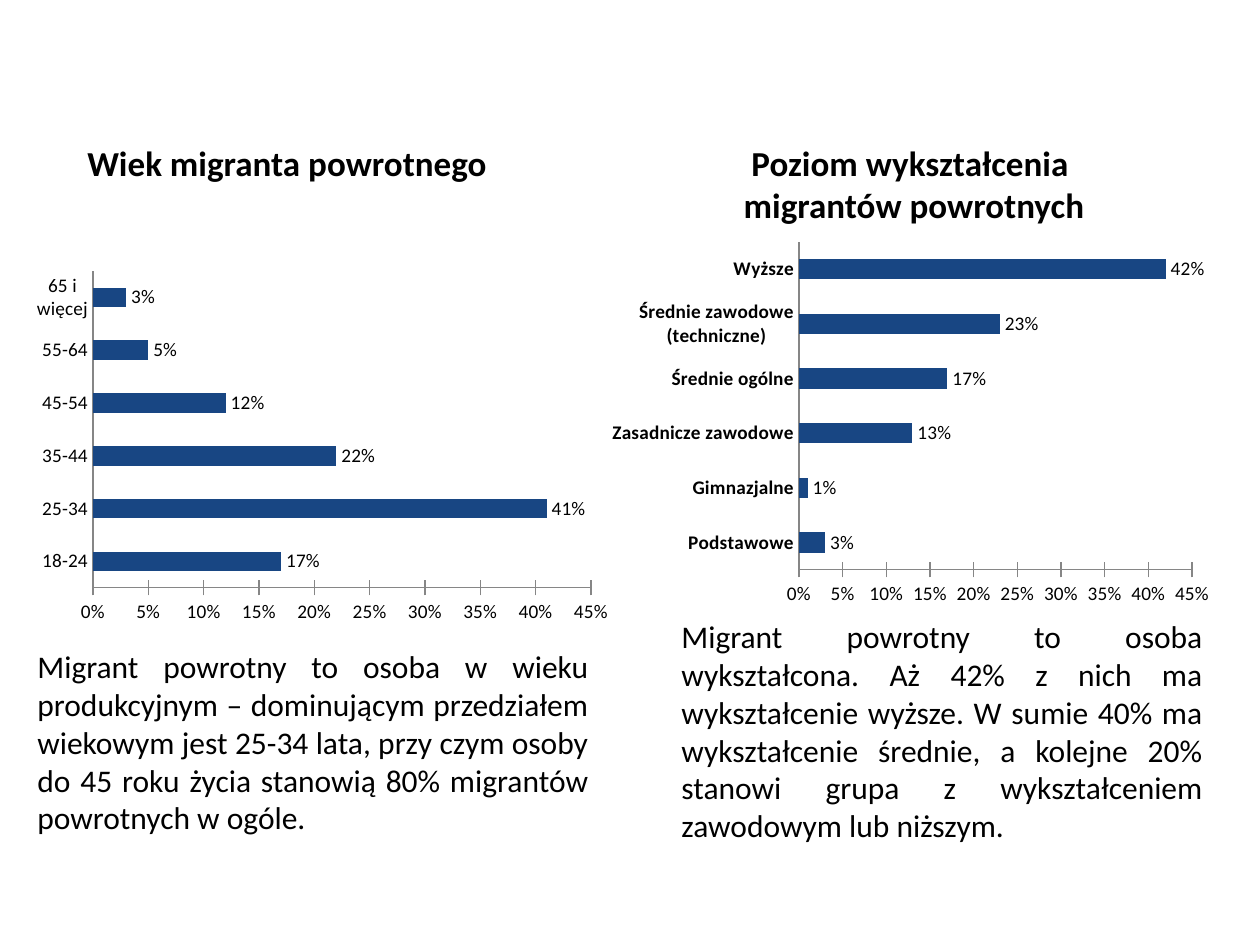
from dataclasses import dataclass

from pptx import Presentation, util as u
from pptx.chart.data import CategoryChartData
from pptx.dml.color import RGBColor
from pptx.enum import chart as ch, text
from pptx.oxml import parse_xml
from pptx.oxml.ns import nsdecls

SCALE = 914400 / 126


@dataclass(frozen=True)
class Theme:
    font: str = "Calibri"
    ink: str = "000000"
    bar: str = "184683"
    axis: str = "868686"
    head: int = 20
    body: int = 18
    label: int = 11


THEME = Theme()


def px(*sizes):
    return [u.Emu(round(size * SCALE)) for size in sizes]


def style(font, size, bold=False):
    font.name = THEME.font
    font.size = u.Pt(size)
    font.bold = bold
    font.color.rgb = RGBColor.from_string(THEME.ink)


def add_text(slide, box, lines, size, align, bold=False, wrap=True):
    frame = slide.shapes.add_textbox(*px(*box)).text_frame
    frame.word_wrap = wrap
    frame.auto_size = text.MSO_AUTO_SIZE.SHAPE_TO_FIT_TEXT
    para = frame.paragraphs[0]
    para.alignment = align
    for i, line in enumerate(lines):
        if i:
            para.add_line_break()
        run = para.add_run()
        run.text = line
        style(run.font, size, bold)


def add_head(slide, box, *lines, wrap=True):
    add_text(slide, box, lines, THEME.head, text.PP_ALIGN.CENTER, True, wrap)


def add_body(slide, box, words):
    add_text(slide, box, [words], THEME.body, text.PP_ALIGN.JUSTIFY)


def place_plot(chart, box, plot):
    """Fix the inner plot area, given in slide px like the chart box."""
    left, top, width, height = box
    parts = {"x": (plot[0] - left) / width, "y": (plot[1] - top) / height,
             "w": plot[2] / width, "h": plot[3] / height}
    modes = '<c:xMode val="edge"/><c:yMode val="edge"/>'
    sizes = "".join(f'<c:{key} val="{val:.4f}"/>' for key, val in parts.items())
    area = chart.element.xpath("c:chart/c:plotArea")[0]
    for old in area.xpath("c:layout"):
        area.remove(old)
    area.insert(0, parse_xml(
        f'<c:layout {nsdecls("c")}><c:manualLayout><c:layoutTarget val="inner"/>'
        f"{modes}{sizes}</c:manualLayout></c:layout>"))


def style_axis(axis, tick, bold=False):
    axis.has_major_gridlines = False
    axis.major_tick_mark = tick
    axis.minor_tick_mark = ch.XL_TICK_MARK.NONE
    axis.format.line.color.rgb = RGBColor.from_string(THEME.axis)
    axis.format.line.width = u.Pt(0.75)
    style(axis.tick_labels.font, THEME.label, bold)


def add_bars(slide, box, plot, shares, bold=False):
    data = CategoryChartData(number_format="0%")
    data.categories = list(shares)
    data.add_series("Series 1", list(shares.values()))
    chart = slide.shapes.add_chart(
        ch.XL_CHART_TYPE.BAR_CLUSTERED, *px(*box), data).chart
    chart.has_title = chart.has_legend = False
    style(chart.font, 10)
    style_axis(chart.category_axis, ch.XL_TICK_MARK.NONE, bold)
    scale = chart.value_axis
    style_axis(scale, ch.XL_TICK_MARK.CROSS)
    scale.minimum_scale, scale.maximum_scale, scale.major_unit = 0, 0.45, 0.05
    scale.tick_labels.number_format = "0%"
    scale.tick_labels.number_format_is_linked = False

    bars = chart.plots[0]
    bars.vary_by_categories = False
    bars.gap_width, bars.overlap = 170, -25
    fill = bars.series[0].format.fill
    fill.solid()
    fill.fore_color.rgb = RGBColor.from_string(THEME.bar)
    bars.has_data_labels = True
    labels = bars.data_labels
    labels.show_value = True
    labels.number_format = "0%"
    labels.number_format_is_linked = False
    labels.position = ch.XL_LABEL_POSITION.OUTSIDE_END
    style(labels.font, THEME.label)
    place_plot(chart, box, plot)


def main():
    deck = Presentation()
    deck.slide_width, deck.slide_height = px(1260, 945)
    slide = deck.slides.add_slide(deck.slide_layouts[6])

    add_head(slide, (44, 135, 486, 55), "Wiek migranta powrotnego")
    add_body(slide, (25, 641, 576, 204),
             "Migrant powrotny to osoba w wieku produkcyjnym – dominującym "
             "przedziałem wiekowym jest 25-34 lata, przy czym osoby do 45 roku "
             "życia stanowią 80% migrantów powrotnych w ogóle.")
    ages = {"18-24": 0.17, "25-34": 0.41, "35-44": 0.22,
            "45-54": 0.12, "55-64": 0.05, "65 i więcej": 0.03}
    add_bars(slide, (25, 265, 595, 367), (93, 271, 498, 317), ages)

    add_head(slide, (730, 135, 368, 97),
             "Poziom wykształcenia ", "migrantów powrotnych", wrap=False)
    levels = {"Podstawowe": 0.03, "Gimnazjalne": 0.01,
              "Zasadnicze zawodowe": 0.13, "Średnie ogólne": 0.17,
              "Średnie zawodowe (techniczne)": 0.23, "Wyższe": 0.42}
    add_bars(slide, (600, 234, 621, 379), (799, 242, 393, 328), levels, bold=True)
    add_body(slide, (669, 611, 546, 242),
             "Migrant powrotny to osoba wykształcona. Aż 42% z nich ma "
             "wykształcenie wyższe. W sumie 40% ma wykształcenie średnie, a "
             "kolejne 20% stanowi grupa z wykształceniem zawodowym lub niższym.")
    deck.save("out.pptx")


if __name__ == "__main__":
    main()
